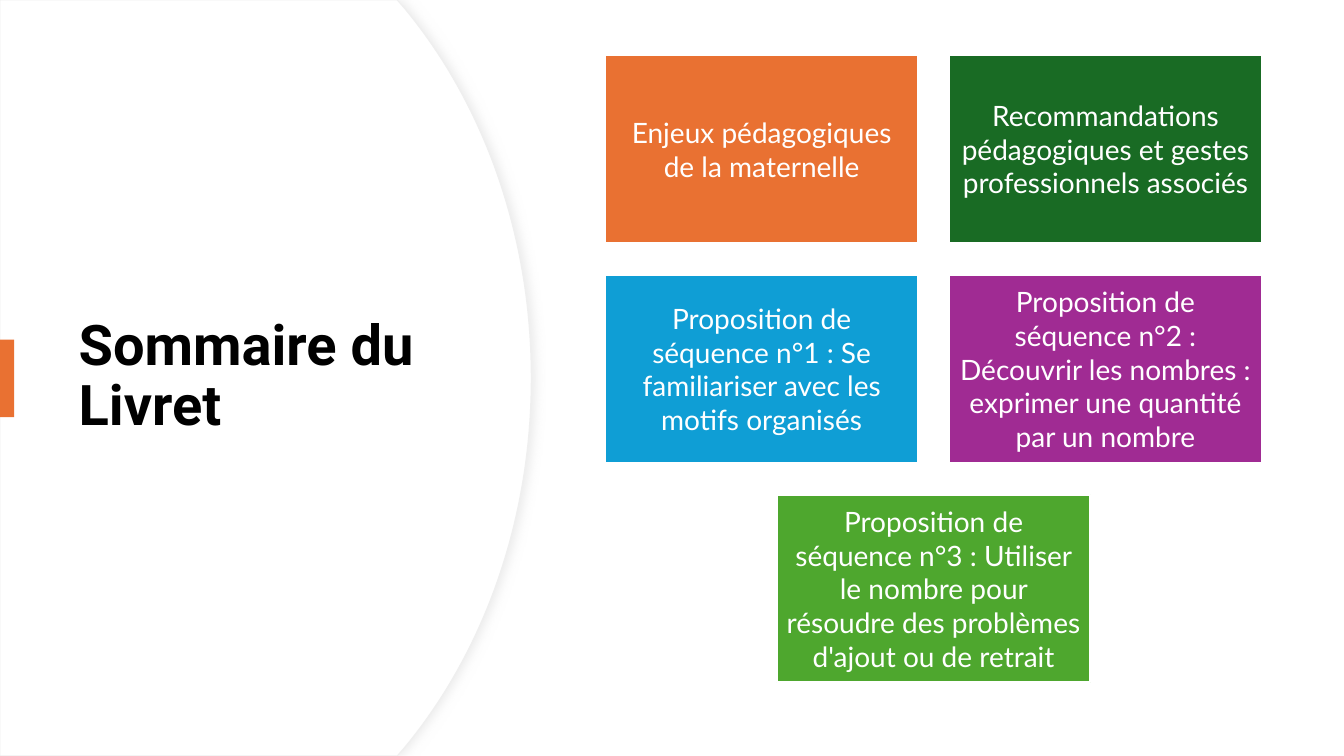
from dataclasses import dataclass

import lxml.etree
import pptx
import pptx.dml.color
import pptx.enum.shapes
import pptx.enum.text
import pptx.oxml.ns
import pptx.util

Inches = pptx.util.Inches
Pt = pptx.util.Pt
RGB = pptx.dml.color.RGBColor.from_string
RECT = pptx.enum.shapes.MSO_SHAPE.RECTANGLE
ALIGN = pptx.enum.text.PP_ALIGN
MIDDLE = pptx.enum.text.MSO_ANCHOR.MIDDLE


@dataclass(frozen=True)
class Theme:
    white: str = "FFFFFF"
    black: str = "000000"
    edge: str = "EFEFEF"
    shade: str = "D9D9D9"
    orange: str = "E97132"
    forest: str = "196B24"
    blue: str = "0F9ED5"
    purple: str = "A02B93"
    green: str = "4EA72E"
    head_font: str = "Roboto"
    body_font: str = "Lato"
    head_size: int = 40
    body_size: int = 20


@dataclass(frozen=True)
class Tile:
    text: str
    fill: str
    col: float
    row: int


THEME = Theme()
SLIDE_W, SLIDE_H = 13.33, 7.5

# Tile grid
GRID_X, GRID_Y = 6.0, 0.55
TILE_W, TILE_H = 3.11, 1.86
STEP_X, STEP_Y = 3.41, 2.18
TILE_PAD = 0.08

TILES = [
    Tile("Enjeux pédagogiques de la maternelle", THEME.orange, 0, 0),
    Tile("Recommandations pédagogiques et gestes professionnels associés",
         THEME.forest, 1, 0),
    Tile("Proposition de séquence n°1 : Se familiariser avec les motifs organisés",
         THEME.blue, 0, 1),
    Tile("Proposition de séquence n°2 : Découvrir les nombres : "
         "exprimer une quantité par un nombre", THEME.purple, 1, 1),
    Tile("Proposition de séquence n°3 : Utiliser le nombre pour résoudre "
         "des problèmes d'ajout ou de retrait", THEME.green, 0.5, 2),
]


def style_run(run, font: str, size: int, color: str, bold: bool = False) -> None:
    run.font.name = font
    run.font.size = Pt(size)
    run.font.bold = bold
    run.font.color.rgb = RGB(color)


def paint(shape, fill: str, line: str = "", width: float = 0) -> None:
    shape.shadow.inherit = False
    shape.fill.solid()
    shape.fill.fore_color.rgb = RGB(fill)
    if line:
        shape.line.color.rgb = RGB(line)
        shape.line.width = Pt(width)
    else:
        shape.line.fill.background()


def arc_points(steps: int = 40) -> list[tuple[float, float]]:
    """Right edge of the panel: a cubic curve mirrored about mid-height."""
    curve = [(4.01, 0.08), (4.79, 1.02), (5.27, 2.32), (5.27, 3.75)]
    upper = [(3.94, 0.0)]
    for i in range(steps + 1):
        t = i / steps
        parts = ((1 - t) ** 3, 3 * t * (1 - t) ** 2, 3 * t * t * (1 - t), t ** 3)
        x, y = (sum(w * p[k] for w, p in zip(parts, curve)) for k in (0, 1))
        upper.append((x, y))
    lower = [(x, SLIDE_H - y) for x, y in reversed(upper[:-1])]
    return upper + lower


def add_shade(shape) -> None:
    """Soft shadow cast to the right."""
    qn = pptx.oxml.ns.qn
    effects = shape.element.spPr.find(qn("a:effectLst"))
    outer = lxml.etree.SubElement(
        effects, qn("a:outerShdw"), blurRad=str(Pt(7)), dist=str(Pt(3)),
        dir="0", algn="l", rotWithShape="0")
    color = lxml.etree.SubElement(outer, qn("a:srgbClr"), val=THEME.shade)
    lxml.etree.SubElement(color, qn("a:alpha"), val="50000")


def add_panel(slide):
    outline = arc_points() + [(0, SLIDE_H)]
    form = slide.shapes.build_freeform(0, 0, scale=1.0)
    form.add_line_segments([(Inches(x), Inches(y)) for x, y in outline], close=True)
    panel = form.convert_to_shape()
    paint(panel, THEME.white, THEME.edge, 0.75)
    add_shade(panel)
    return panel


def set_title(slide, text: str):
    title = slide.shapes.title
    title.left, title.top = Inches(0.68), Inches(1.27)
    title.width, title.height = Inches(3.94), Inches(4.95)
    frame = title.text_frame
    frame.text = text
    frame.word_wrap = True
    frame.auto_size = pptx.enum.text.MSO_AUTO_SIZE.NONE
    frame.vertical_anchor = MIDDLE
    para = frame.paragraphs[0]
    para.alignment = ALIGN.LEFT
    para.line_spacing = 0.9
    style_run(para.runs[0], THEME.head_font, THEME.head_size, THEME.black, True)
    return title


def add_mark(slide) -> None:
    mark = slide.shapes.add_shape(
        RECT, 0, Inches(3.37), Inches(0.14), Inches(0.77))
    paint(mark, THEME.orange)


def add_tile(slide, tile: Tile) -> None:
    box = slide.shapes.add_shape(
        RECT, Inches(GRID_X + tile.col * STEP_X), Inches(GRID_Y + tile.row * STEP_Y),
        Inches(TILE_W), Inches(TILE_H))
    paint(box, tile.fill, THEME.white, 1.5)
    frame = box.text_frame
    frame.text = tile.text
    frame.word_wrap = True
    frame.vertical_anchor = MIDDLE
    frame.margin_left = frame.margin_right = Inches(TILE_PAD)
    frame.margin_top = frame.margin_bottom = Inches(TILE_PAD)
    para = frame.paragraphs[0]
    para.alignment = ALIGN.CENTER
    style_run(para.runs[0], THEME.body_font, THEME.body_size, THEME.white)


def main() -> None:
    deck = pptx.Presentation()
    deck.slide_width, deck.slide_height = Inches(SLIDE_W), Inches(SLIDE_H)
    slide = deck.slides.add_slide(deck.slide_layouts[5])

    # Curved panel, kept behind the title
    title = set_title(slide, "Sommaire du Livret")
    panel = add_panel(slide)
    title.element.addprevious(panel.element)

    # Accent mark and contents
    add_mark(slide)
    for tile in TILES:
        add_tile(slide, tile)

    deck.save("out.pptx")


if __name__ == "__main__":
    main()
